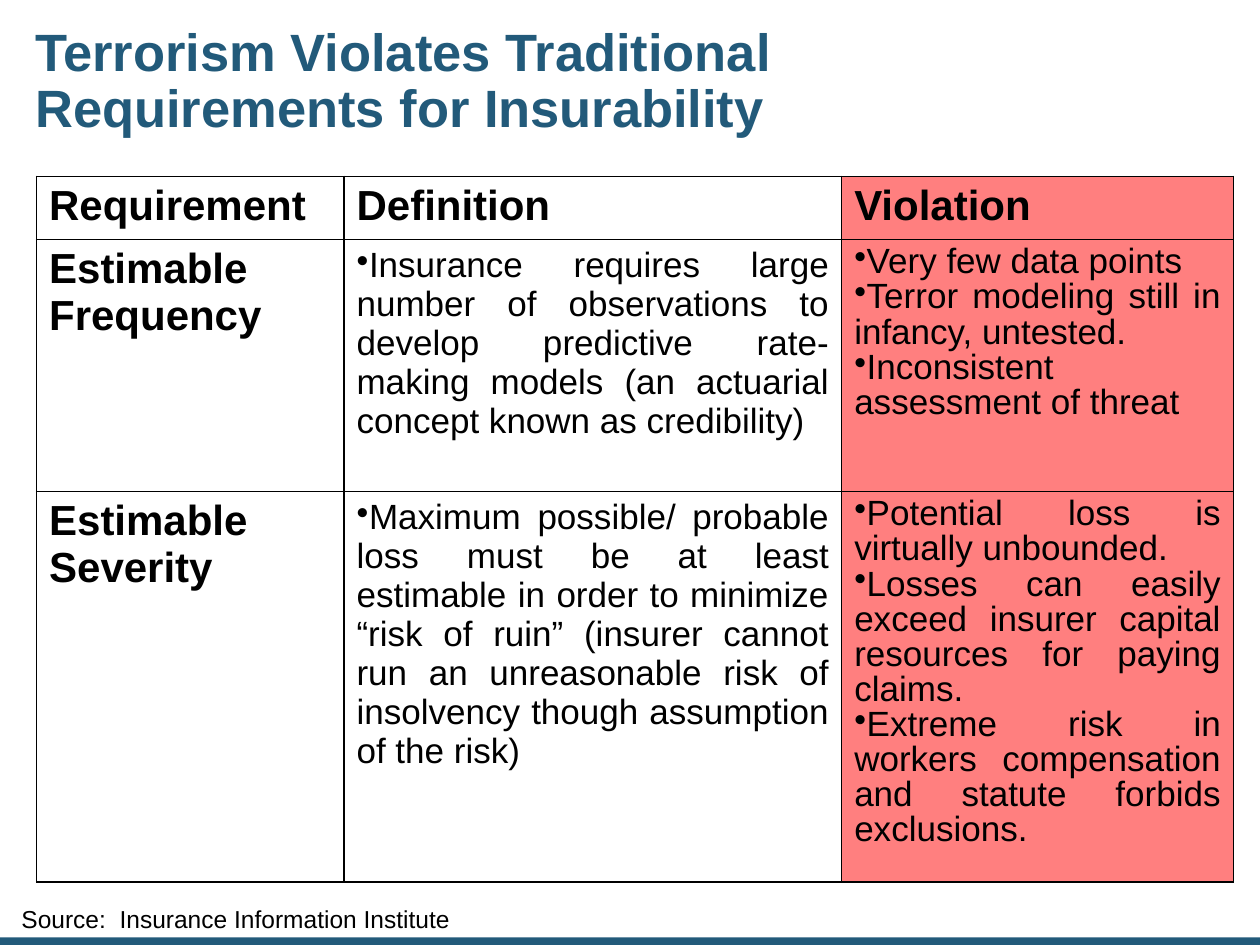
from pptx import Presentation
from pptx.dml.color import RGBColor
from pptx.enum import shapes, text
from pptx.oxml import parse_xml
from pptx.oxml.ns import nsdecls
from pptx.util import Inches, Pt

TEAL = RGBColor(0x22, 0x5A, 0x7A)
BLACK = RGBColor(0, 0, 0)
RED = RGBColor(0xFF, 0, 0)
FONT = "Arial"

TITLE = "Terrorism Violates Traditional Requirements for Insurability"
SOURCE = "Source:  Insurance Information Institute"
HEADERS = ["Requirement", "Definition", "Violation"]
REQUIREMENTS = [
    (["Estimable", "Frequency"],
     ["Insurance requires large number of observations to develop predictive "
      "rate-making models (an actuarial concept known as credibility)"],
     ["Very few data points",
      "Terror modeling still in infancy, untested.",
      "Inconsistent assessment of threat"]),
    (["Estimable", "Severity"],
     ["Maximum possible/ probable loss must be at least estimable in order to "
      "minimize “risk of ruin” (insurer cannot run an unreasonable risk of "
      "insolvency though assumption of the risk)"],
     ["Potential loss is virtually unbounded.",
      "Losses can easily exceed insurer capital resources for paying claims.",
      "Extreme risk in workers compensation and statute forbids exclusions."]),
]
COLUMN_WIDTHS = [2.44, 3.95, 3.11]
ROW_HEIGHTS = [0.5, 2, 3.1]
VIOLATION = 2


def style(para, size, color=BLACK, bold=False):
    for span in para.runs:
        span.font.name = FONT
        span.font.size = Pt(size)
        span.font.bold = bold
        span.font.color.rgb = color


def place(shape, left, top, width, height):
    shape.left, shape.top = Inches(left), Inches(top)
    shape.width, shape.height = Inches(width), Inches(height)


def add_bullet(para):
    props = para._p.get_or_add_pPr()
    props.set("marL", "0")
    props.set("indent", "0")
    props.append(parse_xml(f'<a:buChar {nsdecls("a")} char="•"/>'))
    props.append(parse_xml(
        f'<a:tabLst {nsdecls("a")}><a:tab pos="{Inches(0.25)}" algn="l"/></a:tabLst>'))


def add_borders(cell):
    props = cell._tc.get_or_add_tcPr()
    for side in "LRTB":
        props.append(parse_xml(
            f'<a:ln{side} {nsdecls("a")} w="{Pt(1)}"><a:solidFill>'
            f'<a:srgbClr val="{BLACK}"/></a:solidFill></a:ln{side}>'))


def fill_cell(cell, lines, row, column):
    bulleted = row > 0 and column > 0
    frame = cell.text_frame
    frame.text = "\n".join(lines)
    for para in frame.paragraphs:
        if bulleted:
            add_bullet(para)
            if column == VIOLATION:
                para.line_spacing = 0.9
        para.alignment = text.PP_ALIGN.JUSTIFY
        style(para, 20 if bulleted else 24, bold=not bulleted)

    add_borders(cell)
    if column == VIOLATION:
        cell.fill.solid()
        cell.fill.fore_color.rgb = RED
        color = cell._tc.tcPr.find(".//{*}solidFill[last()]/{*}srgbClr[@val='FF0000']")
        color.append(parse_xml(f'<a:alpha {nsdecls("a")} val="50000"/>'))
    else:
        cell.fill.background()


def add_requirements_table(page):
    rows = [[[header] for header in HEADERS]] + REQUIREMENTS
    table = page.shapes.add_table(
        len(rows), len(HEADERS), Inches(0.29), Inches(1.4),
        Inches(sum(COLUMN_WIDTHS)), Inches(sum(ROW_HEIGHTS))).table
    table.first_row = table.horz_banding = False
    for column, width in zip(table.columns, COLUMN_WIDTHS):
        column.width = Inches(width)
    for row, height in zip(table.rows, ROW_HEIGHTS):
        row.height = Inches(height)
    for r, cells in enumerate(rows):
        for c, lines in enumerate(cells):
            fill_cell(table.cell(r, c), lines, r, c)


def main():
    deck = Presentation()
    deck.slide_width, deck.slide_height = Inches(10), Inches(7.5)
    page = deck.slides.add_slide(deck.slide_layouts[5])

    bar = page.shapes.add_shape(
        shapes.MSO_SHAPE.RECTANGLE, 0, Inches(7.44), Inches(10), Inches(0.06))
    bar.shadow.inherit = False
    bar.fill.solid()
    bar.fill.fore_color.rgb = TEAL
    bar.line.fill.background()

    title = page.shapes.title
    place(title, 0.23, 0.03, 8.33, 1.25)
    frame = title.text_frame
    frame.text = TITLE
    frame.word_wrap = True
    frame.auto_size = text.MSO_AUTO_SIZE.NONE
    frame.vertical_anchor = text.MSO_ANCHOR.MIDDLE
    frame.margin_left = frame.margin_right = Inches(0.05)
    frame.margin_top = frame.margin_bottom = Inches(0.05)
    para = frame.paragraphs[0]
    para.alignment = text.PP_ALIGN.LEFT
    para.line_spacing = 0.9
    style(para, 30, TEAL, bold=True)

    add_requirements_table(page)

    box = page.shapes.add_textbox(
        Inches(0.17), Inches(7.23), Inches(7.28), Inches(0.35))
    frame = box.text_frame
    frame.text = SOURCE
    frame.word_wrap = True
    frame.margin_left = frame.margin_right = 0
    frame.margin_top = frame.margin_bottom = 0
    para = frame.paragraphs[0]
    para.line_spacing = 0.75
    style(para, 14)

    deck.save("out.pptx")


if __name__ == "__main__":
    main()
